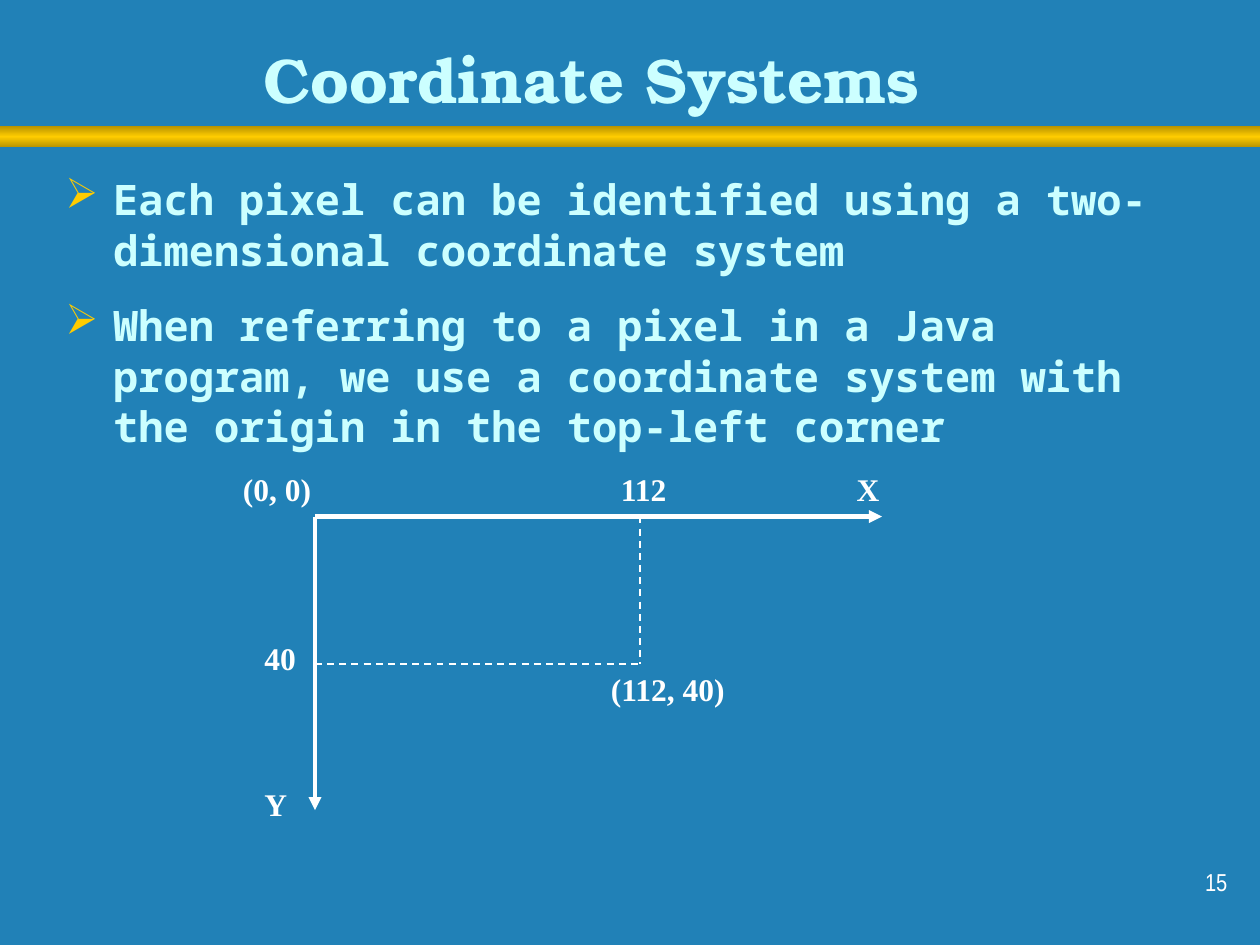
from copy import deepcopy

from lxml.etree import SubElement
from pptx import Presentation
from pptx.dml.color import RGBColor
from pptx.enum.dml import MSO_LINE
from pptx.enum.shapes import MSO_CONNECTOR, MSO_SHAPE
from pptx.enum.text import MSO_ANCHOR, MSO_AUTO_SIZE, PP_ALIGN
from pptx.oxml.ns import qn
from pptx.util import Inches, Pt

WHITE, PALE, GOLD, BRONZE, BLUE = "FFFFFF", "CCFFFF", "FFCC00", "B69200", "2181B7"


def color(hex_code):
    return RGBColor.from_string(hex_code)


def add_frame(slide, box, wrap=True):
    frame = slide.shapes.add_textbox(*map(Inches, box)).text_frame
    frame.word_wrap = wrap
    return frame


def add_run(paragraph, text, size, font, hex_code, bold=True):
    run = paragraph.add_run()
    run.text = text
    run.font.size = Pt(size)
    run.font.name = font
    run.font.bold = bold
    run.font.color.rgb = color(hex_code)


def add_band(slide, box):
    band = slide.shapes.add_shape(MSO_SHAPE.PENTAGON, *map(Inches, box))
    band.adjustments[0] = 0
    band.shadow.inherit = False
    band.line.fill.background()
    band.fill.gradient()
    band.fill.gradient_angle = 90
    stop_list = band.element.spPr.find(qn("a:gradFill")).find(qn("a:gsLst"))
    stop_list.insert(1, deepcopy(stop_list[0]))
    shades = [(0, BRONZE), (0.5, GOLD), (1, BRONZE)]
    for stop, (position, shade) in zip(band.fill.gradient_stops, shades):
        stop.position = position
        stop.color.rgb = color(shade)


def add_title(slide, box, text):
    frame = add_frame(slide, box)
    frame.vertical_anchor = MSO_ANCHOR.BOTTOM
    heading = frame.paragraphs[0]
    heading.alignment = PP_ALIGN.CENTER
    add_run(heading, text, 36, "TeX Gyre Bonum", PALE)


def add_page_number(slide, box, number):
    paragraph = add_frame(slide, box).paragraphs[0]
    paragraph.alignment = PP_ALIGN.RIGHT
    add_run(paragraph, number, 14, "Arial Narrow", WHITE, bold=False)


def add_bullets(slide, box, points):
    frame = add_frame(slide, box)
    for index, point in enumerate(points):
        paragraph = frame.add_paragraph() if index else frame.paragraphs[0]
        paragraph.space_after = Pt(14.4)
        properties = paragraph._p.get_or_add_pPr()
        properties.set("marL", str(Inches(0.38)))
        properties.set("indent", str(Inches(-0.38)))
        bullet_color = SubElement(properties, qn("a:buClr"))
        SubElement(bullet_color, qn("a:srgbClr"), val=GOLD)
        SubElement(properties, qn("a:buChar"), char="➢")
        add_run(paragraph, point, 24, "Noto Sans Mono", PALE)


def add_line(slide, start, end, width, arrow=False):
    line = slide.shapes.add_connector(
        MSO_CONNECTOR.STRAIGHT, *map(Inches, start + end))
    line.line.color.rgb = color(WHITE)
    line.line.width = Pt(width)
    if arrow:
        SubElement(line.line._get_or_add_ln(), qn("a:tailEnd"), type="triangle")
    else:
        line.line.dash_style = MSO_LINE.DASH
    SubElement(line.element.spPr, qn("a:effectLst"))


def add_label(slide, box, text):
    frame = add_frame(slide, box, wrap=False)
    frame.auto_size = MSO_AUTO_SIZE.SHAPE_TO_FIT_TEXT
    add_run(frame.paragraphs[0], text, 18, "Times New Roman", WHITE)


def add_axes(slide, box):
    left, top, width, height = box
    point_x, point_y = left + 2.58, top + 1.17
    add_line(slide, (left, top), (left, top + height), 2.5, arrow=True)
    add_line(slide, (left, top), (left + width, top), 2.5, arrow=True)
    add_line(slide, (left, point_y), (point_x, point_y), 1)
    add_line(slide, (point_x, top), (point_x, point_y), 1)

    above, beside = top - 0.42, left - 0.5
    labels = [
        ("(0, 0)", left - 0.67, above, 0.74),
        ("112", point_x - 0.25, above, 0.58),
        ("X", left + width - 0.3, above, 0.38),
        ("40", beside, point_y - 0.25, 0.45),
        ("Y", beside, top + height - 0.25, 0.38),
        ("(112, 40)", point_x - 0.33, point_y, 1.12),
    ]
    for text, x, y, label_width in labels:
        add_label(slide, (x, y, label_width, 0.4), text)


def main():
    deck = Presentation()
    deck.slide_width, deck.slide_height = Inches(10), Inches(7.5)
    slide = deck.slides.add_slide(deck.slide_layouts[6])
    slide.background.fill.solid()
    slide.background.fill.fore_color.rgb = color(BLUE)

    add_band(slide, (0, 1, 10, 0.17))
    add_page_number(slide, (7.76, 6.83, 2.08, 0.5), "15")
    add_title(slide, (0.42, 0.22, 8.55, 0.75), "Coordinate Systems")
    add_bullets(slide, (0.42, 1.33, 9.08, 5.36), [
        "Each pixel can be identified using a two-dimensional coordinate system",
        "When referring to a pixel in a Java program, we use a coordinate "
        "system with the origin in the top-left corner",
    ])
    add_axes(slide, (2.5, 4.1, 4.5, 2.33))
    deck.save("out.pptx")


if __name__ == "__main__":
    main()
